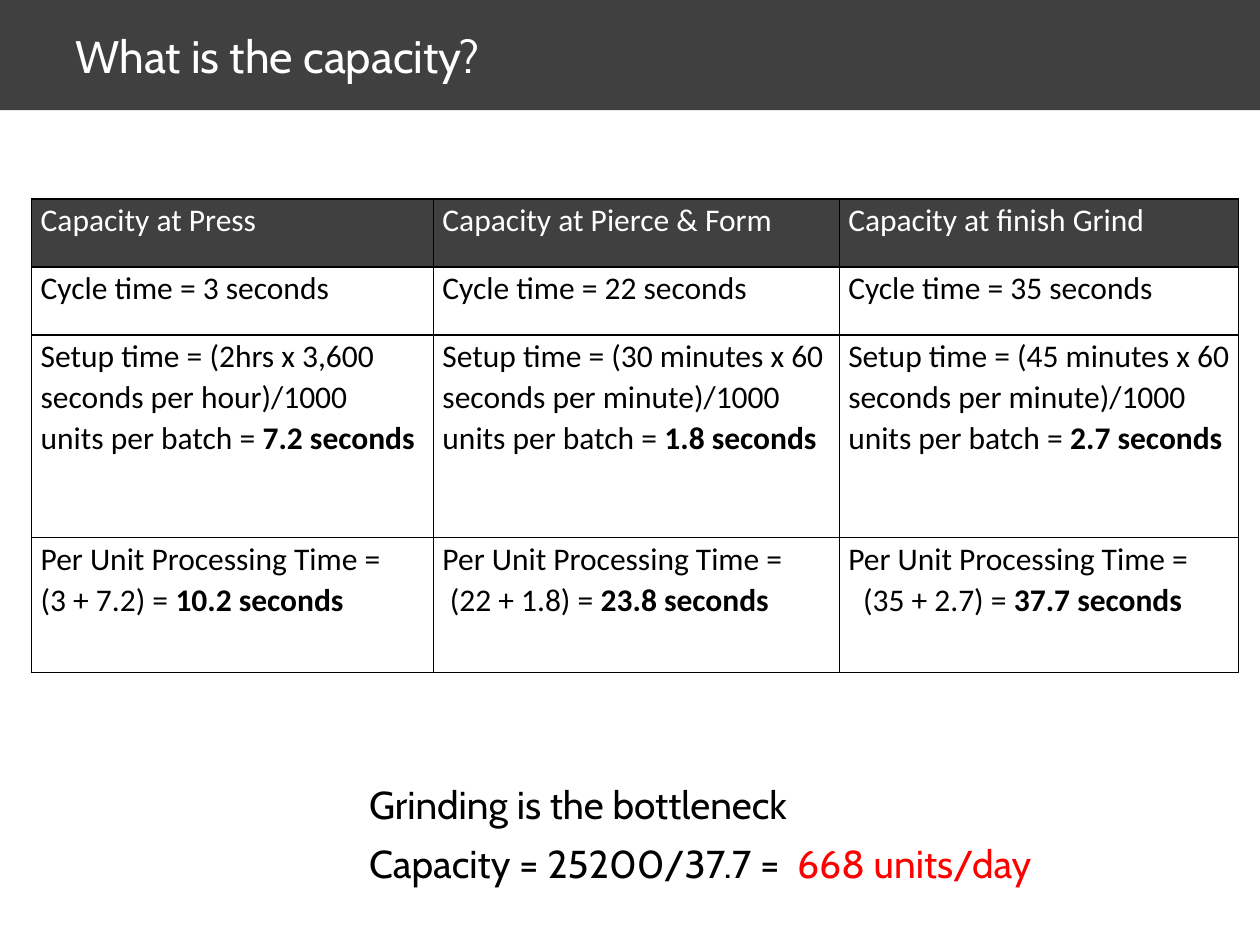
from dataclasses import dataclass

from lxml import etree
from pptx import Presentation
from pptx import util as u
from pptx.dml.color import RGBColor
from pptx.enum import text
from pptx.oxml import ns


@dataclass(frozen=True)
class Theme:
    dark: str = "404040"
    white: str = "FFFFFF"
    black: str = "000000"
    red: str = "FF0000"
    head: str = "Cabin"
    body: str = "Calibri"
    title: float = 26
    note: float = 22.2
    cell: float = 18


T = Theme()
BOLD = {"bold": True}

COLS = [8.1, 8.18, 8.05]
ROWS = [1.37, 1.37, 4.09, 2.72]

# Per station: name, cycle, setup lines, setup result, sum, sum indent, total
DATA = [
    ("Press", 3, ["Setup time = (2hrs x 3,600 seconds per hour)/1000",
                  "units per batch = "], "7.2", "10.2", 0),
    ("Pierce & Form", 22, ["Setup time = (30 minutes x 60 seconds per "
                           "minute)/1000 units per batch = "], "1.8", "23.8", 0.15),
    ("finish Grind", 35, ["Setup time = (45 minutes x 60 seconds per "
                          "minute)/1000 units per batch = "], "2.7", "37.7", 0.3),
]


def style(obj, **vals):
    for key, val in vals.items():
        setattr(obj, key, val)


def write(frame, paras, font, para=None):
    """Fill a frame; each paragraph is a list of (words, extra font values)."""
    for i, runs in enumerate(paras):
        p = frame.paragraphs[0] if i == 0 else frame.add_paragraph()
        style(p, **(para or {}))
        for words, extra in runs:
            vals = {**font, **extra}
            color = vals.pop("color")
            run = p.add_run()
            run.text = words
            style(run.font, **vals)
            run.font.color.rgb = RGBColor.from_string(color)


def paint(item, color):
    item.fill.solid()
    item.fill.fore_color.rgb = RGBColor.from_string(color)


def border(cell):
    props = cell._tc.get_or_add_tcPr()
    for side in ("lnL", "lnR", "lnT", "lnB"):
        line = etree.SubElement(props, ns.qn(f"a:{side}"), w=str(u.Pt(1)))
        fill = etree.SubElement(line, ns.qn("a:solidFill"))
        etree.SubElement(fill, ns.qn("a:srgbClr"), val=T.black)


def add_title(slide):
    bar = slide.shapes.title
    style(bar, left=0, top=0, width=u.Cm(25.4), height=u.Cm(2.22))
    paint(bar, T.dark)
    style(bar.text_frame, margin_left=u.Cm(1.52), word_wrap=True,
          auto_size=text.MSO_AUTO_SIZE.NONE,
          vertical_anchor=text.MSO_ANCHOR.MIDDLE)
    write(bar.text_frame, [[("What is the capacity?", {})]],
          {"size": u.Pt(T.title), "name": T.head, "color": T.white},
          {"alignment": text.PP_ALIGN.LEFT})


def station(name, cycle, setup, extra, total, shift):
    """Return the four cells of one column, from top to bottom."""
    steps = [[(line, {})] for line in setup]
    steps[-1].append((f"{extra} seconds", BOLD))
    return [
        [[(f"Capacity at {name}", {})]],
        [[(f"Cycle time = {cycle} seconds", {})]],
        steps,
        [[("Per Unit Processing Time =", {})],
         [(f"({cycle} + {extra}) = ", {}), (f"{total} seconds", BOLD)]],
    ]


def add_grid(slide):
    grid = slide.shapes.add_table(
        len(ROWS), len(COLS), u.Cm(0.64), u.Cm(4.01),
        u.Cm(sum(COLS)), u.Cm(sum(ROWS))).table
    style(grid, first_row=False, horz_banding=False)
    for row, size in zip(grid.rows, ROWS):
        row.height = u.Cm(size)
    for c, size in enumerate(COLS):
        grid.columns[c].width = u.Cm(size)
        for r, paras in enumerate(station(*DATA[c])):
            cell = grid.cell(r, c)
            style(cell, margin_left=u.Cm(0.18), margin_right=u.Cm(0.18),
                  margin_top=0, margin_bottom=0)
            border(cell)
            if r == 0:
                paint(cell, T.dark)
            else:
                cell.fill.background()
            write(cell.text_frame, paras,
                  {"size": u.Pt(T.cell), "name": T.body, "bold": False,
                   "color": T.black if r else T.white},
                  {"line_spacing": 1.07})
        # The sum line is set in a little
        last = grid.cell(len(ROWS) - 1, c).text_frame.paragraphs[-1]
        last._p.get_or_add_pPr().set("marL", str(u.Cm(DATA[c][-1])))


def add_note(slide):
    box = slide.shapes.add_textbox(u.Cm(7.19), u.Cm(14.6), u.Cm(14.6), u.Cm(3.38))
    style(box.text_frame, word_wrap=True, vertical_anchor=text.MSO_ANCHOR.BOTTOM)
    write(box.text_frame,
          [[("Grinding is the bottleneck", {})],
           [("Capacity = 25200/37.7 =  ", {}), ("668 units/day", {"color": T.red})]],
          {"size": u.Pt(T.note), "name": T.head, "color": T.black},
          {"line_spacing": 0.8, "space_before": u.Pt(12)})


def main():
    deck = Presentation()
    style(deck, slide_width=u.Cm(25.4), slide_height=u.Cm(19.05))
    slide = deck.slides.add_slide(deck.slide_layouts.get_by_name("Title Only"))
    add_title(slide)
    add_grid(slide)
    add_note(slide)
    deck.save("out.pptx")


if __name__ == "__main__":
    main()
